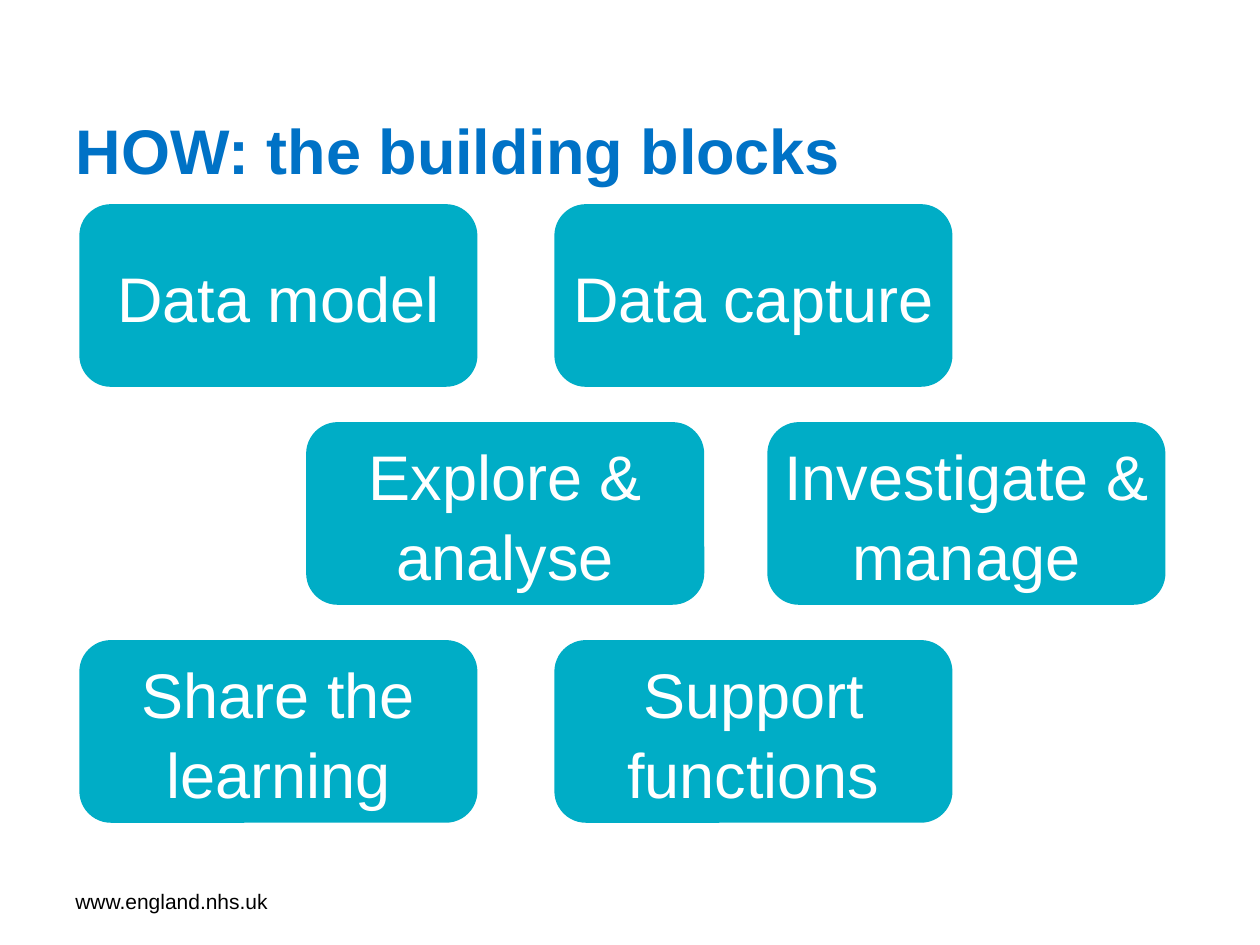
from dataclasses import dataclass

from pptx import Presentation
from pptx.dml.color import RGBColor
from pptx.enum import shapes, text
from pptx.util import Inches, Pt


@dataclass(frozen=True)
class Theme:
    """Colours, font and type sizes of the deck."""
    font: str = "Arial"
    heading: RGBColor = RGBColor(0x00, 0x72, 0xC6)
    block: RGBColor = RGBColor(0x00, 0xAD, 0xC6)
    light: RGBColor = RGBColor(0xFF, 0xFF, 0xFF)
    dark: RGBColor = RGBColor(0x00, 0x00, 0x00)
    large: Pt = Pt(36)
    small: Pt = Pt(12)


THEME = Theme()
BLOCK_WIDTH, BLOCK_HEIGHT = 3.16, 1.45
ROW_STEP = 1.73
BLOCK_ROWS = [
    (0, 3.77, ["Data model", "Data capture"]),
    (1.8, 3.66, ["Explore &\u00a0analyse".replace("\u00a0", " "), "Investigate & manage"]),
    (0, 3.77, ["Share the learning", "Support functions"]),
]


def write(shape, words, size, color, align, bold=False):
    """Fill a shape with one formatted, vertically centred paragraph."""
    frame = shape.text_frame
    frame.word_wrap = True
    frame.auto_size = text.MSO_AUTO_SIZE.NONE
    frame.vertical_anchor = text.MSO_ANCHOR.MIDDLE
    frame.text = words
    para = frame.paragraphs[0]
    para.alignment = align
    para.font.name = THEME.font
    para.font.size = size
    para.font.bold = bold
    para.font.color.rgb = color
    return para


def place_title(page, left, top, width, height, words):
    """Move and format the title placeholder."""
    title = page.shapes.title
    title.left, title.top = Inches(left), Inches(top)
    title.width, title.height = Inches(width), Inches(height)
    write(title, words, THEME.large, THEME.heading, text.PP_ALIGN.LEFT, bold=True)


def place_footer(page, left, top, width, height, words):
    """Add the web address at the foot of the page."""
    box = page.shapes.add_textbox(Inches(left), Inches(top), Inches(width), Inches(height))
    write(box, words, THEME.small, THEME.dark, text.PP_ALIGN.LEFT)


def place_block(page, left, top, width, height, words):
    """Add one rounded building block."""
    block = page.shapes.add_shape(
        shapes.MSO_SHAPE.ROUNDED_RECTANGLE,
        Inches(left), Inches(top), Inches(width), Inches(height),
    )
    block.adjustments[0] = 0.173
    block.shadow.inherit = False
    block.fill.solid()
    block.fill.fore_color.rgb = THEME.block
    block.line.fill.background()
    frame = block.text_frame
    frame.margin_left = frame.margin_right = frame.margin_top = frame.margin_bottom = 0
    para = write(block, words, THEME.large, THEME.light, text.PP_ALIGN.CENTER)
    para.line_spacing = 1.05


def place_blocks(page, left, top, rows):
    """Lay out staggered rows of building blocks."""
    for row, (indent, step, labels) in enumerate(rows):
        for column, label in enumerate(labels):
            place_block(page, left + indent + column * step, top + row * ROW_STEP,
                        BLOCK_WIDTH, BLOCK_HEIGHT, label)


def main():
    """Build and save the deck."""
    deck = Presentation()
    deck.slide_width, deck.slide_height = Inches(10), Inches(7.5)
    page = deck.slides.add_slide(deck.slide_layouts.get_by_name("Title Only"))
    place_footer(page, 0.5, 6.95, 2.33, 0.4, "www.england.nhs.uk")
    place_title(page, 0.5, 0.82, 8.05, 0.73, "HOW: the building blocks")
    place_blocks(page, 0.63, 1.62, BLOCK_ROWS)
    deck.save("out.pptx")


if __name__ == "__main__":
    main()
